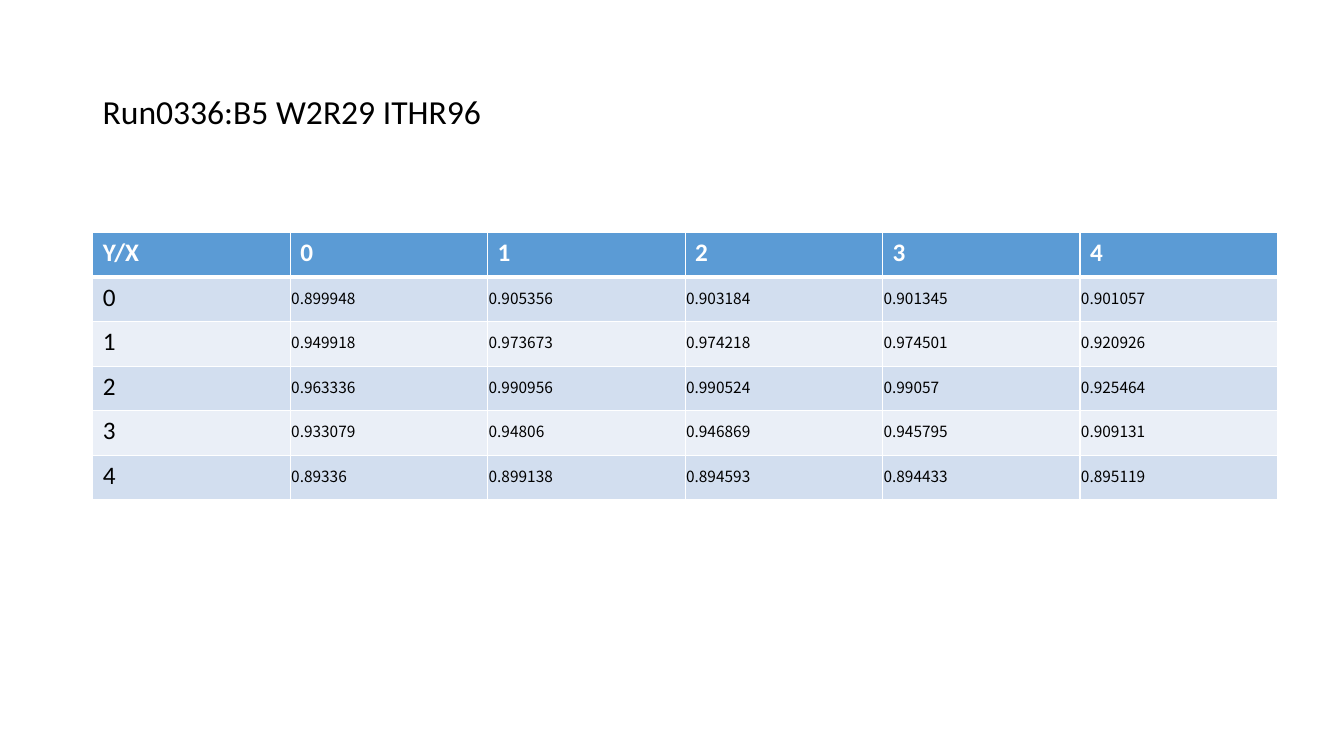
from lxml import etree
from pptx import Presentation
from pptx.dml.color import RGBColor
from pptx.enum.text import MSO_ANCHOR
from pptx.oxml.ns import qn
from pptx.util import Inches, Pt

MIDDLE = MSO_ANCHOR.MIDDLE
TOP = MSO_ANCHOR.TOP

COLORS = {
    "text": "000000",
    "white": "FFFFFF",
    "header": "5B9BD5",
    "band_dark": "D2DEEF",
    "band_light": "EAEFF7",
}

TITLE_FONT = {"size": 24, "name": "Calibri", "color": "text"}
HEADER_FONT = {"size": 18, "name": "Calibri", "color": "white", "bold": True}
LABEL_FONT = {"size": 18, "name": "Calibri", "color": "text", "bold": False}
VALUE_FONT = {"size": 11, "name": "Noto Sans CJK SC", "color": "text", "bold": False}

LABEL_CELL = {"vertical_anchor": TOP}
VALUE_CELL = {
    "vertical_anchor": MIDDLE,
    "margin_left": Inches(0.01),
    "margin_top": Inches(0.01),
    "margin_right": Inches(0.01),
    "margin_bottom": Inches(0.05),
}

ROWS = [
    ["Y/X", "0", "1", "2", "3", "4"],
    ["0", "0.899948", "0.905356", "0.903184", "0.901345", "0.901057"],
    ["1", "0.949918", "0.973673", "0.974218", "0.974501", "0.920926"],
    ["2", "0.963336", "0.990956", "0.990524", "0.99057", "0.925464"],
    ["3", "0.933079", "0.94806", "0.946869", "0.945795", "0.909131"],
    ["4", "0.89336", "0.899138", "0.894593", "0.894433", "0.895119"],
]


def rgb(name):
    return RGBColor.from_string(COLORS[name])


def write_text(tf, text, fmt):
    r = tf.paragraphs[0].add_run()
    r.text = text
    for key, value in fmt.items():
        if key == "color":
            r.font.color.rgb = rgb(value)
        else:
            setattr(r.font, key, Pt(value) if key == "size" else value)


def set_borders(cell, widths):
    """Draw white cell borders; widths maps L, R, T, B to points."""
    tc_pr = cell._tc.get_or_add_tcPr()
    for side, width in widths.items():
        ln = etree.SubElement(tc_pr, qn(f"a:ln{side}"), w=str(Pt(width)))
        fill = etree.SubElement(ln, qn("a:solidFill"))
        etree.SubElement(fill, qn("a:srgbClr"), val=COLORS["white"])


def add_title(slide, left, top, width, height):
    sp = slide.shapes.add_textbox(Inches(left), Inches(top), Inches(width), Inches(height))
    tf = sp.text_frame
    tf.word_wrap = True
    tf.vertical_anchor = MIDDLE
    tf.paragraphs[0].line_spacing = 0.9
    write_text(tf, "Run0336:B5 W2R29 ITHR96", TITLE_FONT)


def add_efficiency_table(slide, left, top, width, height):
    frame = slide.shapes.add_table(
        len(ROWS), len(ROWS[0]), Inches(left), Inches(top), Inches(width), Inches(height)
    )
    for i, row in enumerate(ROWS):
        band = "header" if i == 0 else "band_dark" if i % 2 else "band_light"
        borders = {"L": 1, "R": 1, "T": 3 if i == 1 else 1, "B": 3 if i == 0 else 1}
        for j, text in enumerate(row):
            cell = frame.table.cell(i, j)
            is_value = i > 0 and j > 0
            for key, value in (VALUE_CELL if is_value else LABEL_CELL).items():
                setattr(cell, key, value)
            set_borders(cell, borders)
            cell.fill.solid()
            cell.fill.fore_color.rgb = rgb(band)
            fmt = HEADER_FONT if i == 0 else VALUE_FONT if is_value else LABEL_FONT
            write_text(cell.text_frame, text, fmt)


def main():
    prs = Presentation()
    prs.slide_width, prs.slide_height = Inches(13.33), Inches(7.5)
    slide = prs.slides.add_slide(prs.slide_layouts[6])
    add_title(slide, 0.92, 0.4, 11.5, 1.45)
    add_efficiency_table(slide, 0.92, 2.31, 11.75, 2.65)
    prs.save("out.pptx")


if __name__ == "__main__":
    main()
